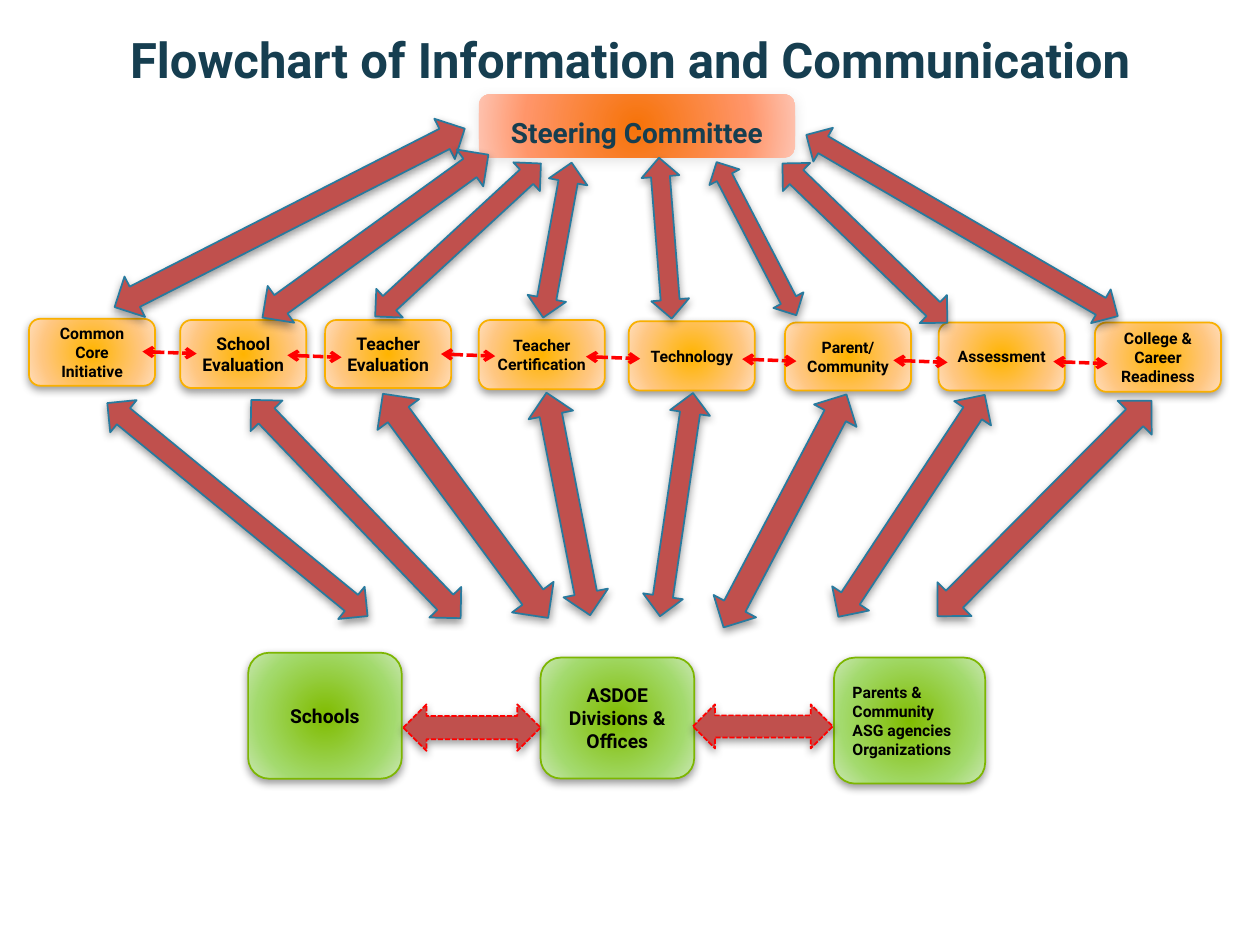
from pptx import Presentation
from pptx.dml.color import RGBColor
from pptx.enum.dml import MSO_LINE
from pptx.enum.shapes import MSO_CONNECTOR, MSO_SHAPE
from pptx.enum.text import MSO_ANCHOR as Anchor, MSO_AUTO_SIZE, PP_ALIGN as Align
from pptx.oxml import parse_xml
from pptx.oxml.ns import nsdecls, qn
from pptx.util import Pt

COLORS = {
    "title": "163E50", "text": "000000", "shadow": "000000",
    "soft_shadow": "C0C0C0", "arrow": "C0504D", "arrow_edge": "287A9E",
    "link": "FF0000", "amber_edge": "F9B000", "green_edge": "7DB602",
}
GRADIENTS = {
    "orange": ("F67309", "FF9569", "FEC3B0"),
    "amber": ("FFB400", "FFC67F", "FFDEBD"),
    "green": ("80BC00", "A3DA6D", "CBE7B4"),
}
STOPS = (0, 69, 100)

# text, left, top, height, font size
TEAMS = [
    ("Common Core Initiative", 16.6, 182.2, 38.2, 9),
    ("School Evaluation", 103, 182.9, 38.9, 10),
    ("Teacher Evaluation", 185.8, 182.9, 38.9, 10),
    ("Teacher Certification", 273.6, 182.9, 39.6, 9),
    ("Technology", 359.3, 183.6, 39.6, 9),
    ("Parent/Community", 448.6, 184.3, 38.9, 9),
    ("Assessment", 536.4, 184.3, 38.9, 9),
    ("College & Career Readiness", 625.7, 184.3, 39.6, 9),
]
# lines, left, top, width, height, font size, alignment
GROUPS = [
    (["Schools"], 141.8, 373, 87.8, 72, 11, Align.CENTER),
    (["ASDOE Divisions & Offices"], 308.9, 375.8, 87.8, 69.1, 11, Align.CENTER),
    (["Parents & Community", "ASG agencies", "Organizations"],
     476.6, 375.8, 86.4, 72, 9, Align.LEFT),
]
# left, top, width, length, rotation
COMMITTEE_ARROWS = [
    (152.6, 12.2, 25.9, 224.6, 63), (201.6, 55.4, 25.9, 159.1, 54.2),
    (250.6, 72.7, 22.3, 128.9, 47.3), (307.4, 92.2, 22.3, 90, 10.4),
    (369.4, 90, 21.6, 92.2, 355.5), (422.6, 87.1, 19.4, 98.6, 332.5),
    (483.1, 73.4, 22.3, 131, 314), (538.6, 25.9, 22.3, 205.9, 300.2),
]
GROUP_ARROWS = [
    (123.8, 195.1, 23.8, 192.2, 309.3), (190.8, 204.5, 25.2, 172.8, 316.2),
    (251.3, 209.5, 29.5, 159.1, 323.6), (311.8, 223.2, 25.9, 129.6, 348.9),
    (375.1, 223.9, 23, 128.9, 8.4), (434.9, 216.7, 27.4, 150.5, 27.8),
    (508.3, 213.1, 25.2, 151.9, 33.4), (583.2, 203.8, 27.4, 173.5, 44.8),
]
SIDE_ARROWS = [(230.4, 402.5, 78.5, 26.6), (396, 402.5, 79.9, 25.2)]
LINK_STARTS = [
    (81.4, 200.9), (164.2, 203), (252, 202.3), (334.8, 203.8),
    (424.1, 205.2), (510.5, 205.9), (601.9, 206.6),
]
LINK_WIDTH, LINK_DROP = 31, 1.2


class FlowPage:
    font = "Roboto"

    def __init__(self, page):
        self.page = page

    def add_lines(self, frame, lines, size, color="text", align=Align.CENTER):
        frame.word_wrap = True
        for index, line in enumerate(lines):
            para = frame.add_paragraph() if index else frame.paragraphs[0]
            para.alignment = align
            span = para.add_run()
            span.text = line
            span.font.name = self.font
            span.font.size = Pt(size)
            span.font.bold = True
            span.font.color.rgb = RGBColor.from_string(COLORS[color])

    def title(self, text, left, top, width, height):
        box = self.page.shapes.title
        box.left, box.top, box.width, box.height = map(Pt, (left, top, width, height))
        box.text_frame.auto_size = MSO_AUTO_SIZE.NONE
        box.text_frame.vertical_anchor = Anchor.BOTTOM
        self.add_lines(box.text_frame, [text], 28, "title")

    def stroke(self, line, color, width=1, dashed=False):
        line.color.rgb = RGBColor.from_string(COLORS[color])
        line.width = Pt(width)
        if dashed:
            line.dash_style = MSO_LINE.SQUARE_DOT

    def shadow(self, shape, color="shadow", blur=5):
        shape.shadow.inherit = False
        effects = shape._element.spPr.find(qn("a:effectLst"))
        effects.append(parse_xml(
            f'<a:outerShdw {nsdecls("a")} blurRad="{Pt(blur)}" dist="{Pt(2)}" '
            f'dir="5400000" rotWithShape="0"><a:srgbClr val="{COLORS[color]}">'
            '<a:alpha val="40000"/></a:srgbClr></a:outerShdw>'))

    def radial_fill(self, shape, palette):
        stops = "".join(
            f'<a:gs pos="{stop * 1000}"><a:srgbClr val="{color}"/></a:gs>'
            for stop, color in zip(STOPS, GRADIENTS[palette]))
        shape.fill.background()
        props = shape._element.spPr
        props.replace(props.find(qn("a:noFill")), parse_xml(
            f'<a:gradFill {nsdecls("a")} rotWithShape="1"><a:gsLst>{stops}</a:gsLst>'
            '<a:path path="circle"><a:fillToRect l="100000" t="100000" '
            'r="100000" b="100000"/></a:path></a:gradFill>'))

    def card(self, lines, left, top, width, height, size, palette, edge=None,
             color="text", align=Align.CENTER):
        box = self.page.shapes.add_shape(
            MSO_SHAPE.ROUNDED_RECTANGLE, *map(Pt, (left, top, width, height)))
        self.radial_fill(box, palette)
        if edge:
            self.stroke(box.line, edge)
            self.shadow(box)
        else:
            box.line.fill.background()
            self.shadow(box, "soft_shadow", 7)
        box.text_frame.vertical_anchor = Anchor.MIDDLE
        self.add_lines(box.text_frame, lines, size, color, align)
        return box

    def block_arrow(self, kind, left, top, width, height, rotation=0,
                    edge="arrow_edge", dashed=False):
        arrow = self.page.shapes.add_shape(kind, *map(Pt, (left, top, width, height)))
        arrow.rotation = rotation
        arrow.fill.solid()
        arrow.fill.fore_color.rgb = RGBColor.from_string(COLORS["arrow"])
        self.stroke(arrow.line, edge, dashed=dashed)
        self.shadow(arrow)

    def link(self, left, top):
        connector = self.page.shapes.add_connector(
            MSO_CONNECTOR.STRAIGHT,
            *map(Pt, (left, top, left + LINK_WIDTH, top + LINK_DROP)))
        self.stroke(connector.line, "link", 2, dashed=True)
        props = connector._element.spPr
        for end in ("headEnd", "tailEnd"):
            props.find(qn("a:ln")).append(
                parse_xml(f'<a:{end} {nsdecls("a")} type="arrow"/>'))
        props.append(parse_xml(f'<a:effectLst {nsdecls("a")}/>'))


def main():
    deck = Presentation()
    deck.slide_width, deck.slide_height = Pt(720), Pt(540)
    flow = FlowPage(deck.slides.add_slide(deck.slide_layouts[5]))

    flow.title("Flowchart of Information and Communication", 43.2, 8.6, 633.6, 45.4)
    committee = flow.card(["Steering Committee"], 273.6, 54, 180.7, 36, 16,
                          "orange", color="title")
    committee.text_frame.margin_top = Pt(10.4)
    for text, left, top, height, size in TEAMS:
        flow.card([text], left, top, 72, height, size, "amber", "amber_edge")
    for lines, left, top, width, height, size, align in GROUPS:
        flow.card(lines, left, top, width, height, size, "green", "green_edge",
                  align=align)

    for place in COMMITTEE_ARROWS + GROUP_ARROWS:
        flow.block_arrow(MSO_SHAPE.UP_DOWN_ARROW, *place)
    for place in SIDE_ARROWS:
        flow.block_arrow(MSO_SHAPE.LEFT_RIGHT_ARROW, *place, edge="link", dashed=True)
    for start in LINK_STARTS:
        flow.link(*start)

    deck.save("out.pptx")


if __name__ == "__main__":
    main()
